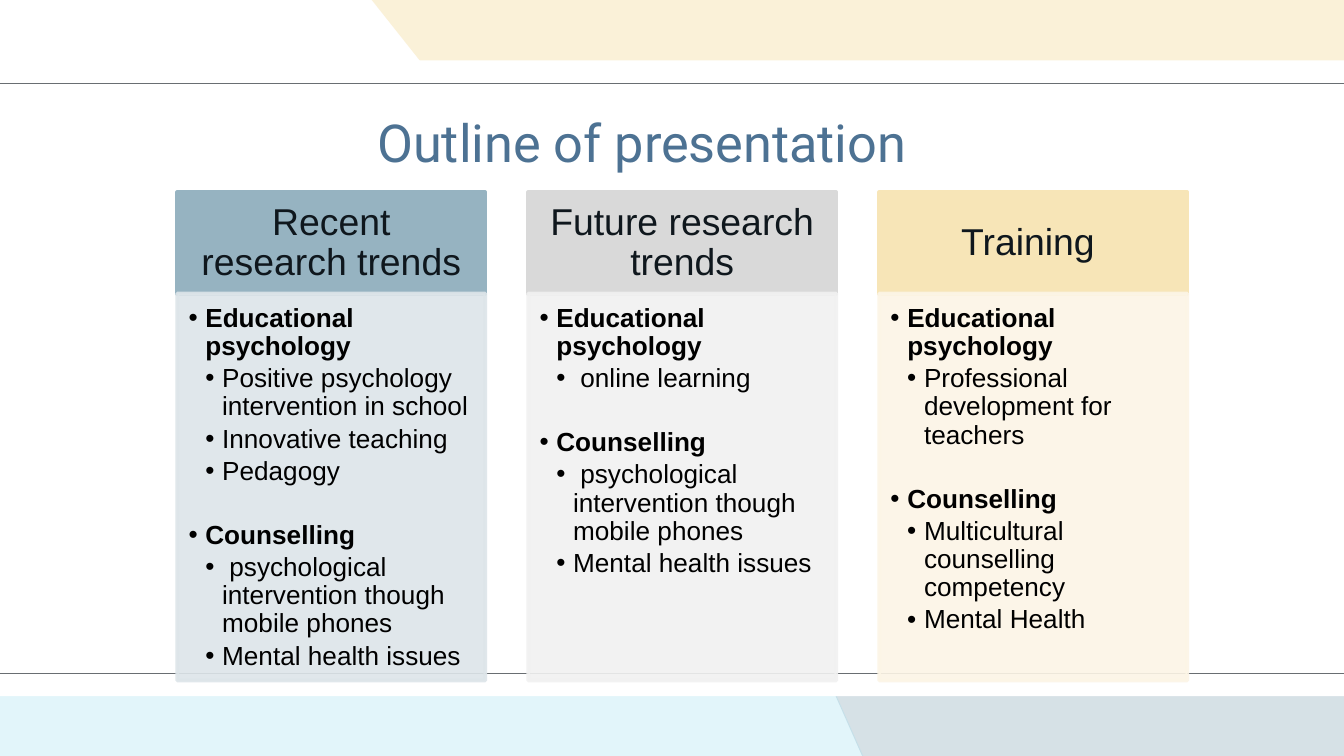
"""Build the 'Outline of presentation' slide: three headed list columns on a banded background."""
from dataclasses import dataclass

from pptx import Presentation
from pptx.dml.color import RGBColor
from pptx.enum.shapes import MSO_CONNECTOR, MSO_SHAPE
from pptx.enum.text import MSO_ANCHOR, MSO_AUTO_SIZE, PP_ALIGN
from pptx.oxml.ns import qn
from pptx.util import Pt
from lxml.etree import SubElement


@dataclass(frozen=True)
class Theme:
    """Fonts, type sizes and colours of the slide."""
    title_font: str = "Roboto"
    body_font: str = "Arial"
    title_size: float = 28
    head_size: float = 20
    list_size: float = 14
    title: str = "4D7293"
    head: str = "0F171D"
    text: str = "000000"
    white: str = "FFFFFF"
    rule: str = "696E72"
    steel: str = "96B3C1"
    sand: str = "F7E5B7"
    sky: str = "9EDDEF"
    grey: str = "D9D9D9"
    pale_steel: str = "DDE5E9"
    pale_grey: str = "F1F1F1"
    pale_sand: str = "FCF5E6"


@dataclass(frozen=True)
class Box:
    """A rectangle in points."""
    left: float
    top: float
    width: float
    height: float

    def place(self, sp) -> None:
        """Move and size a shape to this rectangle."""
        sp.left, sp.top = Pt(self.left), Pt(self.top)
        sp.width, sp.height = Pt(self.width), Pt(self.height)


@dataclass(frozen=True)
class Band:
    """A translucent background polygon."""
    points: tuple
    color: str
    alpha: int


@dataclass(frozen=True)
class Topic:
    """A bold list entry and its sub-entries."""
    name: str
    items: tuple


@dataclass(frozen=True)
class Column:
    """A heading with its list of topics."""
    heading: str
    head_fill: str
    body_fill: str
    topics: tuple


T = Theme()
COL_LEFT, COL_STEP, COL_WIDTH = 95, 188, 165
HEAD_TOP, HEAD_HEIGHT = 103, 54.4
BODY_TOP, BODY_HEIGHT = 157.2, 207.4
INDENT, TOPIC_GAP = 9, 17

BANDS = (
    Band(((729, 430), (729, 162), (387, 236), (472, 428)), T.steel, 39),
    Band(((729, 236), (729, -6), (194.4, -6), (386.6, 236)), T.sand, 53),
    Band(((474, 431), (386, 233), (-4, 170), (-4, 431)), T.sky, 29),
)
PHONES = " psychological intervention though mobile phones"
COLUMNS = (
    Column("Recent research trends ", T.steel, T.pale_steel, (
        Topic("Educational psychology", (
            "Positive psychology intervention in school", "Innovative teaching", "Pedagogy")),
        Topic("Counselling", (PHONES, "Mental health issues")))),
    Column("Future research trends", T.grey, T.pale_grey, (
        Topic("Educational psychology", (" online learning",)),
        Topic("Counselling", (PHONES, "Mental health issues")))),
    Column("Training ", T.sand, T.pale_sand, (
        Topic("Educational psychology", ("Professional development for teachers",)),
        Topic("Counselling", ("Multicultural counselling competency", "Mental Health")))),
)


def paint(fill, color: str, alpha: int = 100) -> None:
    """Give a fill a solid colour with an opacity in percent."""
    fill.solid()
    fill.fore_color.rgb = RGBColor.from_string(color)
    if alpha < 100:
        for clr in fill._xPr.iter(qn("a:srgbClr")):
            if clr.getparent().getparent() is fill._xPr:
                SubElement(clr, qn("a:alpha")).set("val", str(alpha * 1000))


def outline(sp, color: str, alpha: int = 100) -> None:
    """Give a shape a two-point outline."""
    sp.line.width = Pt(2)
    paint(sp.line.fill, color, alpha)


def add_run(p, text: str, font: str, size: float, color: str, bold: bool = False) -> None:
    """Append a formatted run to a paragraph."""
    r = p.add_run()
    r.text = text
    r.font.name, r.font.size, r.font.bold = font, Pt(size), bold
    r.font.color.rgb = RGBColor.from_string(color)


def set_frame(tf, anchor, left: float, top: float, right: float, bottom: float) -> None:
    """Set the anchor and insets of a wrapping text frame."""
    tf.word_wrap, tf.auto_size, tf.vertical_anchor = True, MSO_AUTO_SIZE.NONE, anchor
    tf.margin_left, tf.margin_top = Pt(left), Pt(top)
    tf.margin_right, tf.margin_bottom = Pt(right), Pt(bottom)


def add_rect(s, box: Box, color: str):
    """Add a plain filled rectangle."""
    sp = s.shapes.add_shape(MSO_SHAPE.RECTANGLE, 0, 0, 0, 0)
    box.place(sp)
    sp.shadow.inherit = False
    paint(sp.fill, color)
    sp.line.fill.background()
    return sp


def add_band(s, band: Band) -> None:
    """Add one background polygon."""
    pts = [(Pt(x), Pt(y)) for x, y in band.points]
    fb = s.shapes.build_freeform(*pts[0], scale=1.0)
    fb.add_line_segments(pts[1:], close=True)
    sp = fb.convert_to_shape()
    sp.shadow.inherit = False
    paint(sp.fill, band.color, band.alpha)
    sp.line.fill.background()


def add_rule(s, y: float) -> None:
    """Add a thin line across the slide."""
    ln = s.shapes.add_connector(MSO_CONNECTOR.STRAIGHT, Pt(-8.6), Pt(y), Pt(722.9), Pt(y))
    ln.line.width = Pt(0.75)
    ln.line.color.rgb = RGBColor.from_string(T.rule)
    SubElement(ln._element.spPr, qn("a:effectLst"))


def add_entry(p, text: str, level: int, gap: float) -> None:
    """Write one bulleted list entry."""
    p.level = level
    p.line_spacing, p.space_before, p.space_after = 0.9, Pt(gap), Pt(2.1)
    p.alignment = PP_ALIGN.LEFT
    pPr = p._p.get_or_add_pPr()
    pPr.set("marL", str(Pt(INDENT * (level + 1))))
    pPr.set("indent", str(Pt(-INDENT)))
    SubElement(SubElement(pPr, qn("a:buClr")), qn("a:srgbClr")).set("val", T.text)
    SubElement(pPr, qn("a:buFont")).set("typeface", T.body_font)
    SubElement(pPr, qn("a:buChar")).set("char", "•")
    add_run(p, text, T.body_font, T.list_size, T.text, bold=level == 0)


def add_column(s, ph, col: Column, left: float) -> None:
    """Draw a heading box and fill the list placeholder under it."""
    head = add_rect(s, Box(left, HEAD_TOP, COL_WIDTH, HEAD_HEIGHT), col.head_fill)
    outline(head, col.head_fill)
    set_frame(head.text_frame, MSO_ANCHOR.MIDDLE, 11.4, 6.4, 11.4, 6.4)
    p = head.text_frame.paragraphs[0]
    p.alignment, p.line_spacing = PP_ALIGN.CENTER, 0.9
    add_run(p, col.heading, T.body_font, T.head_size, T.head)

    s.shapes._spTree.append(ph._element)
    Box(left, BODY_TOP, COL_WIDTH, BODY_HEIGHT).place(ph)
    paint(ph.fill, col.body_fill, 90)
    outline(ph, col.body_fill, 90)
    tf = ph.text_frame
    set_frame(tf, MSO_ANCHOR.TOP, 6, 6, 8, 9)
    entries = [(text, int(j > 0), TOPIC_GAP if i and not j else 0)
               for i, topic in enumerate(col.topics)
               for j, text in enumerate((topic.name, *topic.items))]
    for n, entry in enumerate(entries):
        add_entry(tf.add_paragraph() if n else tf.paragraphs[0], *entry)


def main() -> None:
    """Build and save the slide."""
    prs = Presentation()
    prs.slide_width, prs.slide_height = Pt(720), Pt(405)
    s = prs.slides.add_slide(prs.slide_layouts[4])
    title, *lists, spare = list(s.placeholders)
    spare._element.getparent().remove(spare._element)

    for band in BANDS:
        add_band(s, band)
    add_rect(s, Box(-2, 32.4, 723.6, 340.6), T.white)
    for y in (44.6, 360.7):
        add_rule(s, y)

    s.shapes._spTree.append(title._element)
    Box(115.2, 55.4, 457.2, 41).place(title)
    set_frame(title.text_frame, MSO_ANCHOR.MIDDLE, 7.2, 7.2, 7.2, 7.2)
    p = title.text_frame.paragraphs[0]
    p.alignment = PP_ALIGN.CENTER
    add_run(p, "Outline of presentation", T.title_font, T.title_size, T.title)

    for i, (ph, col) in enumerate(zip(lists, COLUMNS)):
        add_column(s, ph, col, COL_LEFT + i * COL_STEP)
    prs.save("out.pptx")


if __name__ == "__main__":
    main()
